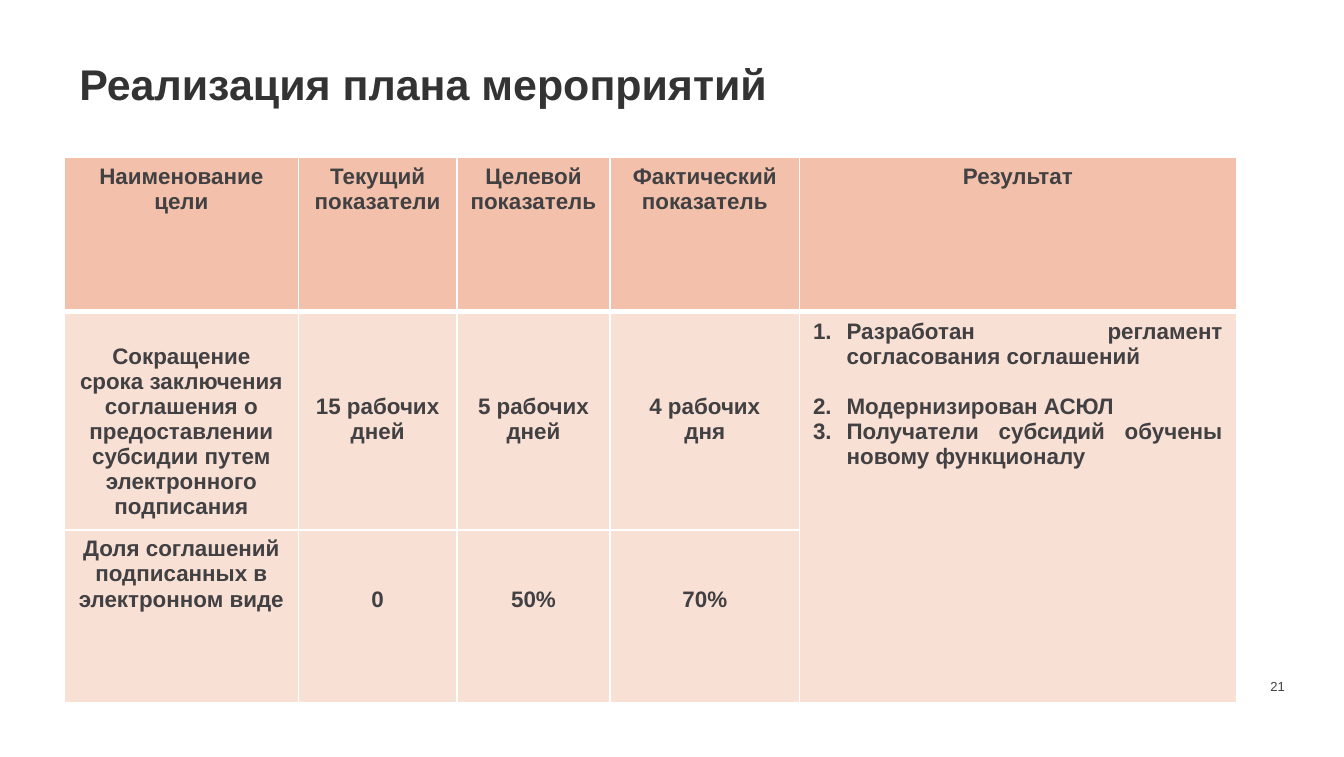
import dataclasses
import typing

import lxml.etree
import pptx
import pptx.dml.color
import pptx.enum.text
import pptx.oxml.ns
import pptx.util

ALIGN = pptx.enum.text.PP_ALIGN
ANCHOR = pptx.enum.text.MSO_ANCHOR
FONT = "Arial"
TEXT_COLOR = "414042"
TITLE_COLOR = "333333"
HEADER_FILL = "F3C1AB"
BODY_FILL = "F9E0D5"
BORDER_COLOR = "FFFFFF"
SLIDE_WIDTH = pptx.util.Inches(10)
SLIDE_HEIGHT = pptx.util.Inches(5.63)
LINE_HEIGHT = pptx.util.Pt(13.5)
CELL_INSET = pptx.util.Inches(0.05)
LIST_INDENT = pptx.util.Inches(0.25)

COLUMN_SHARES = [17.4, 11.8, 11.4, 14.1, 32.5]
ROW_SHARES = [20.43, 28.77, 22.91]


@dataclasses.dataclass
class Entry:
    paragraphs: list[str]
    lines_above: int = 0
    numbered: bool = False


TABLE_ROWS = [
    [
        Entry(["Наименование цели"]),
        Entry(["Текущий показатели"]),
        Entry(["Целевой показатель"]),
        Entry(["Фактический показатель"]),
        Entry(["Результат"]),
    ],
    [
        Entry(["Сокращение срока заключения соглашения о предоставлении "
               "субсидии путем электронного подписания"], 1),
        Entry(["15 рабочих дней"], 3),
        Entry(["5 рабочих дней"], 3),
        Entry(["4 рабочих", "дня"], 3),
        Entry(["Разработан регламент согласования соглашений",
               "Модернизирован АСЮЛ",
               "Получатели субсидий обучены новому функционалу"], numbered=True),
    ],
    [
        Entry(["Доля соглашений подписанных в электронном виде"]),
        Entry(["0"], 2),
        Entry(["50%"], 2),
        Entry(["70%"], 2),
    ],
]


def across(percent: float) -> int:
    return round(SLIDE_WIDTH * percent / 100)


def down(percent: float) -> int:
    return round(SLIDE_HEIGHT * percent / 100)


def color(value: str) -> pptx.dml.color.RGBColor:
    return pptx.dml.color.RGBColor.from_string(value)


def format_font(paragraph: typing.Any, size: float, value: str, bold: bool) -> None:
    paragraph.font.name = FONT
    paragraph.font.size = pptx.util.Pt(size)
    paragraph.font.bold = bold
    paragraph.font.color.rgb = color(value)


def clear_frame(text_frame: typing.Any, anchor: typing.Any) -> None:
    text_frame.margin_left = text_frame.margin_right = 0
    text_frame.margin_top = text_frame.margin_bottom = 0
    text_frame.vertical_anchor = anchor
    text_frame.auto_size = pptx.enum.text.MSO_AUTO_SIZE.NONE
    text_frame.word_wrap = True


def add_element(parent: typing.Any, tag: str, **attributes: str) -> typing.Any:
    return lxml.etree.SubElement(parent, pptx.oxml.ns.qn(tag), attributes)


def add_number(paragraph: typing.Any) -> None:
    properties = paragraph._p.get_or_add_pPr()
    properties.set("marL", str(LIST_INDENT))
    properties.set("indent", str(-LIST_INDENT))
    add_element(properties, "a:buFont", typeface="+mj-lt")
    add_element(properties, "a:buAutoNum", type="arabicPeriod")


def draw_borders(cell: typing.Any, top: float, bottom: float) -> None:
    properties = cell._tc.get_or_add_tcPr()
    for side, width in {"L": 1, "R": 1, "T": top, "B": bottom}.items():
        line = add_element(properties, f"a:ln{side}", w=str(pptx.util.Pt(width)))
        add_element(add_element(line, "a:solidFill"), "a:srgbClr", val=BORDER_COLOR)


def write_entry(cell: typing.Any, entry: Entry) -> None:
    cell.margin_top = CELL_INSET + entry.lines_above * LINE_HEIGHT
    text_frame = cell.text_frame
    text_frame.text = "\n".join(entry.paragraphs)
    for paragraph in text_frame.paragraphs:
        paragraph.alignment = ALIGN.JUSTIFY if entry.numbered else ALIGN.CENTER
        if entry.numbered:
            add_number(paragraph)
        format_font(paragraph, 12, TEXT_COLOR, True)
    if entry.numbered:
        text_frame.paragraphs[0].space_after = LINE_HEIGHT


def add_title(slide: typing.Any) -> None:
    title = slide.shapes.title
    title.left, title.top = across(5.9), down(8.35)
    title.width, title.height = across(71.8), down(6.39)
    clear_frame(title.text_frame, ANCHOR.TOP)
    title.text_frame.text = "Реализация плана мероприятий"
    paragraph = title.text_frame.paragraphs[0]
    paragraph.alignment = ALIGN.LEFT
    paragraph.line_spacing = 0.9
    format_font(paragraph, 23, TITLE_COLOR, True)


def add_page_number(slide: typing.Any) -> None:
    box = slide.shapes.add_textbox(across(89.5), down(88.99), across(6.1), down(2.66))
    clear_frame(box.text_frame, ANCHOR.BOTTOM)
    box.text_frame.text = "21"
    paragraph = box.text_frame.paragraphs[0]
    paragraph.alignment = ALIGN.RIGHT
    format_font(paragraph, 7, TEXT_COLOR, False)


def add_results_table(slide: typing.Any) -> None:
    table = slide.shapes.add_table(
        len(ROW_SHARES), len(COLUMN_SHARES), across(4.8), down(20.78),
        across(sum(COLUMN_SHARES)), down(sum(ROW_SHARES)),
    ).table
    for column, share in zip(table.columns, COLUMN_SHARES):
        column.width = across(share)
    for row_index, (row, share) in enumerate(zip(table.rows, ROW_SHARES)):
        row.height = down(share)
        for cell in row.cells:
            draw_borders(cell, 3 if row_index == 1 else 1, 3 if row_index == 0 else 1)
            cell.fill.solid()
            cell.fill.fore_color.rgb = color(BODY_FILL if row_index else HEADER_FILL)
    table.cell(1, 4).merge(table.cell(2, 4))
    for row, entries in zip(table.rows, TABLE_ROWS):
        for cell, entry in zip(row.cells, entries):
            write_entry(cell, entry)


def main() -> None:
    presentation = pptx.Presentation()
    presentation.slide_width = SLIDE_WIDTH
    presentation.slide_height = SLIDE_HEIGHT
    slide = presentation.slides.add_slide(presentation.slide_layouts[5])
    add_page_number(slide)
    add_title(slide)
    add_results_table(slide)
    presentation.save("out.pptx")


if __name__ == "__main__":
    main()
